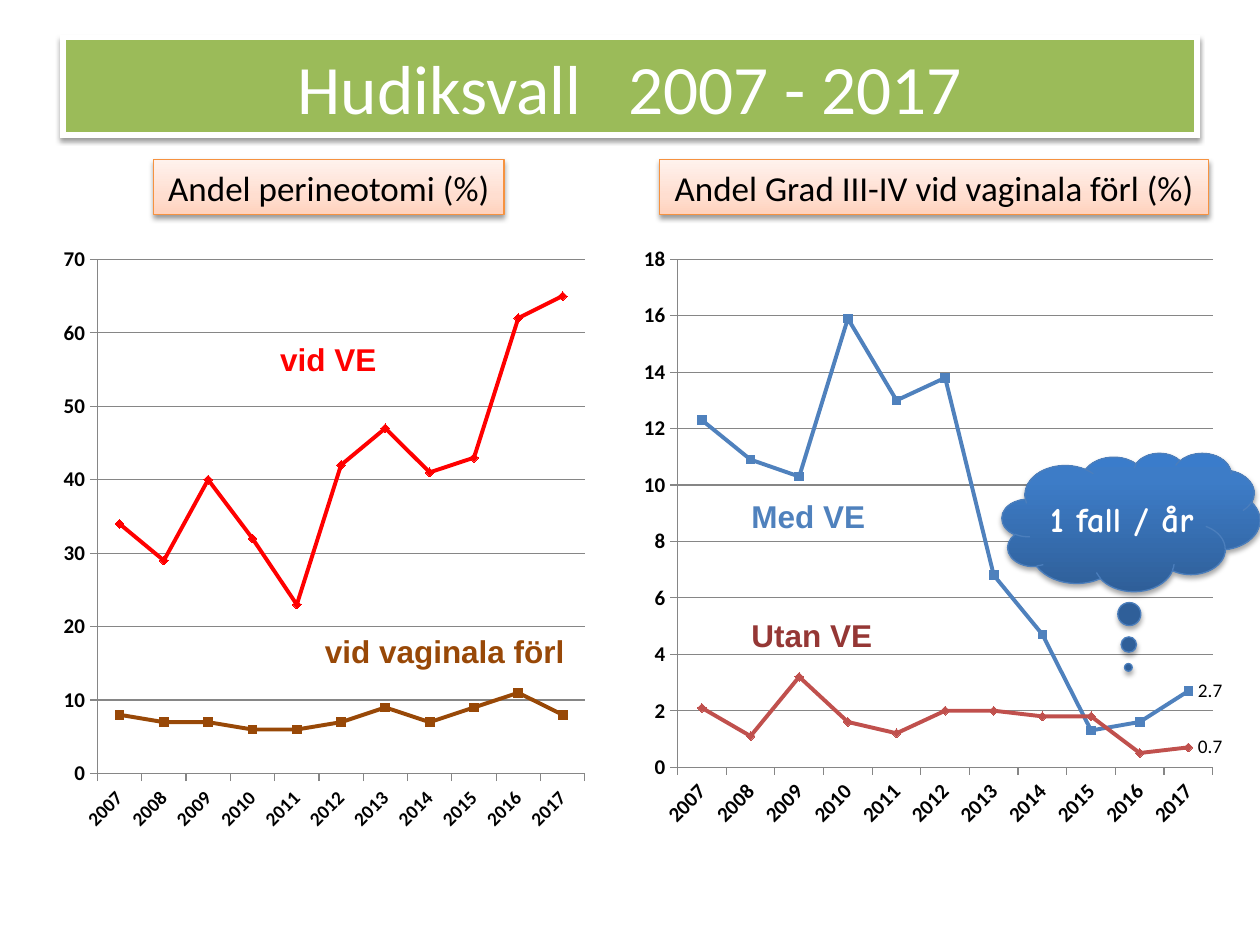
from copy import deepcopy

from lxml import etree
from pptx import Presentation
from pptx.chart.data import CategoryChartData
from pptx.dml.color import RGBColor
from pptx.enum.chart import XL_CHART_TYPE, XL_LABEL_POSITION, XL_MARKER_STYLE
from pptx.enum.shapes import MSO_SHAPE
from pptx.enum.text import MSO_ANCHOR, PP_ALIGN
from pptx.oxml.ns import qn
from pptx.util import Cm, Pt

LINE_MARKERS = XL_CHART_TYPE.LINE_MARKERS
LABEL_RIGHT = XL_LABEL_POSITION.RIGHT
SQUARE, DIAMOND = XL_MARKER_STYLE.SQUARE, XL_MARKER_STYLE.DIAMOND
RECTANGLE, CLOUD = MSO_SHAPE.RECTANGLE, MSO_SHAPE.CLOUD_CALLOUT
CENTER, LEFT = PP_ALIGN.CENTER, PP_ALIGN.LEFT
MIDDLE = MSO_ANCHOR.MIDDLE

COLORS = {
    "white": "FFFFFF", "black": "000000", "green": "9BBB59", "axis": "868686",
    "red": "FF0000", "brown": "984807", "blue": "4F81BD", "brick": "C0504D",
    "dark red": "953735", "orange": "F69240", "cloud line": "4B7EBC",
}
HEADING_STOPS = [(0, "FFD2BD"), (0.35, "FFDED0"), (1, "FFF2ED")]
CLOUD_STOPS = [(0, "2F5F99"), (0.8, "3D7CC7"), (1, "3A7CCB")]
YEARS = [str(year) for year in range(2007, 2018)]

PANELS = [
    {
        "box": (1.09, 3.22, 10.92, 13.72),
        "heading": ("Andel perineotomi (%)", 2.01, 7.06),
        "labels": [("vid VE", "red", 4.31, 3.51, 2.46),
                   ("vid vaginala förl", "brown", 5.21, 9.4, 5.38)],
        "series": [
            ("vid vaginala förl", "brown", SQUARE, [8, 7, 7, 6, 6, 7, 9, 7, 9, 11, 8]),
            ("vid VE", "red", DIAMOND, [34, 29, 40, 32, 23, 42, 47, 41, 43, 62, 65]),
        ],
        "plot_height": 0.85,
        "scale": (70, 10), "format": "#,##0", "year_size": 11, "last_value": False,
    },
    {
        "box": (12.7, 3.22, 11.99, 13.71),
        "heading": ("Andel Grad III-IV vid vaginala förl (%)", 0.6, 11.07),
        "labels": [("Med VE", "blue", 2.2, 6.67, 2.87),
                   ("Utan VE", "dark red", 2.2, 9.07, 2.97)],
        "series": [
            ("Med VE", "blue", SQUARE,
             [12.3, 10.9, 10.3, 15.9, 13.0, 13.8, 6.8, 4.7, 1.3, 1.6, 2.7]),
            ("Utan VE", "brick", DIAMOND,
             [2.1, 1.1, 3.2, 1.6, 1.2, 2.0, 2.0, 1.8, 1.8, 0.5, 0.7]),
        ],
        "plot_height": 0.84,
        "scale": (18, 2), "format": "0", "year_size": 12, "last_value": True,
    },
]


def rgb(name):
    return RGBColor.from_string(COLORS[name])


def set_text(shape, text, font, size, color, bold=False, align=CENTER):
    shape.text_frame.text = text
    paragraph = shape.text_frame.paragraphs[0]
    paragraph.alignment = align
    run_font = paragraph.runs[0].font
    run_font.name, run_font.size, run_font.bold = font, Pt(size), bold
    run_font.color.rgb = rgb(color)


def set_line(line, color, width):
    line.color.rgb = rgb(color)
    line.width = Pt(width)


def add_shadow(shape, alpha):
    shape.shadow.inherit = False
    effects = shape._element.spPr.find(qn("a:effectLst"))
    shadow = etree.SubElement(effects, qn("a:outerShdw"), blurRad=str(Pt(3.1)),
                              dist=str(Pt(1.7)), dir="5400000", rotWithShape="0")
    color = etree.SubElement(shadow, qn("a:srgbClr"), val=COLORS["black"])
    etree.SubElement(color, qn("a:alpha"), val=str(alpha * 1000))


def set_gradient(shape, stops):
    """Fill from bottom to top with three stops."""
    shape.fill.gradient()
    shape.fill.gradient_angle = 90
    stop_list = shape._element.spPr.find(qn("a:gradFill")).find(qn("a:gsLst"))
    stop_list.append(deepcopy(stop_list[-1]))
    for stop, (position, color) in zip(shape.fill.gradient_stops, stops):
        stop.position = position
        stop.color.rgb = RGBColor.from_string(color)


def add_title(slide, left, top, width, height):
    title = slide.shapes.title
    title.left, title.top, title.width, title.height = map(Cm, (left, top, width, height))
    title.fill.solid()
    title.fill.fore_color.rgb = rgb("green")
    set_line(title.line, "white", 3)
    # Sharp border corners
    etree.SubElement(title._element.spPr.find(qn("a:ln")), qn("a:miter"), lim="800000")
    add_shadow(title, 38)
    set_text(title, "Hudiksvall   2007 - 2017", "Calibri", 39.6, "white")
    title.text_frame.vertical_anchor = MIDDLE


def set_plot_area(chart, plot_height):
    plot_area = chart._chartSpace.chart.plotArea
    for old_layout in plot_area.findall(qn("c:layout")):
        plot_area.remove(old_layout)
    layout = etree.Element(qn("c:layout"))
    plot_area.insert(0, layout)
    manual = etree.SubElement(layout, qn("c:manualLayout"))
    etree.SubElement(manual, qn("c:layoutTarget"), val="inner")
    for side in "xy":
        etree.SubElement(manual, qn(f"c:{side}Mode"), val="edge")
    for side, share in zip("xywh", (0.08, 0.04, 0.9, plot_height)):
        etree.SubElement(manual, qn(f"c:{side}"), val=str(share))


def format_axes(chart, panel):
    years, values = chart.category_axis, chart.value_axis
    for axis, size in ((years, panel["year_size"]), (values, 12)):
        axis.tick_labels.font.size = Pt(size)
        axis.tick_labels.font.bold = True
        set_line(axis.format.line, "axis", 0.75)
    years._element.find(qn("c:txPr")).find(qn("a:bodyPr")).set("rot", "-2700000")
    values.minimum_scale = 0
    values.maximum_scale, values.major_unit = panel["scale"]
    values.tick_labels.number_format = panel["format"]
    values.tick_labels.number_format_is_linked = False
    set_line(values.major_gridlines.format.line, "axis", 0.75)


def add_line_chart(slide, panel, left, top, width, height):
    data = CategoryChartData()
    data.categories = YEARS
    for name, _, _, values in panel["series"]:
        data.add_series(name, values)
    chart = slide.shapes.add_chart(
        LINE_MARKERS, Cm(left), Cm(top), Cm(width), Cm(height), data).chart
    chart.has_legend = chart.has_title = False
    chart.font.name, chart.font.size = "Calibri", Pt(10)
    chart.font.color.rgb = rgb("black")
    chart.plots[0].vary_by_categories = False
    set_plot_area(chart, panel["plot_height"])
    format_axes(chart, panel)
    for series, (_, color, marker, values) in zip(chart.plots[0].series, panel["series"]):
        series.smooth = False
        set_line(series.format.line, color, 2.25)
        series.marker.style, series.marker.size = marker, 5
        series.marker.format.fill.solid()
        series.marker.format.fill.fore_color.rgb = rgb(color)
        set_line(series.marker.format.line, color, 0.75)
        if panel["last_value"]:
            label = series.points[len(values) - 1].data_label
            label.font.size = Pt(11)
            label.position = LABEL_RIGHT


def add_panel(slide, panel):
    """Place a heading, a line chart and its series labels in the panel's box."""
    left, top, width, height = panel["box"]
    add_line_chart(slide, panel, left, top + 1.52, width, height - 1.52)
    text, offset, heading_width = panel["heading"]
    heading = slide.shapes.add_shape(
        RECTANGLE, Cm(left + offset), Cm(top), Cm(heading_width), Cm(1.11))
    set_gradient(heading, HEADING_STOPS)
    set_line(heading.line, "orange", 0.75)
    add_shadow(heading, 38)
    set_text(heading, text, "Calibri", 20, "black")
    heading.text_frame.word_wrap = False
    for text, color, x, y, label_width in panel["labels"]:
        label = slide.shapes.add_textbox(
            Cm(left + x), Cm(top + y), Cm(label_width), Cm(1.02))
        set_text(label, text, "Arial", 18, color, True, LEFT)
        label.text_frame.word_wrap = False


def add_cloud(slide, left, top, width, height):
    cloud = slide.shapes.add_shape(CLOUD, Cm(left), Cm(top), Cm(width), Cm(height))
    cloud.adjustments[0], cloud.adjustments[1] = -0.01, 1.05
    set_gradient(cloud, CLOUD_STOPS)
    set_line(cloud.line, "cloud line", 0.75)
    add_shadow(cloud, 35)
    set_text(cloud, "1 fall / år", "Comic Neue", 20, "white", True)
    cloud.text_frame.vertical_anchor = MIDDLE


def main():
    presentation = Presentation()
    presentation.slide_width, presentation.slide_height = Cm(25.4), Cm(19.05)
    slide = presentation.slides.add_slide(presentation.slide_layouts[5])
    add_title(slide, 1.27, 0.76, 22.86, 1.96)
    for panel in PANELS:
        add_panel(slide, panel)
    add_cloud(slide, 20.2, 9.13, 5.2, 2.79)
    presentation.save("out.pptx")


if __name__ == "__main__":
    main()
